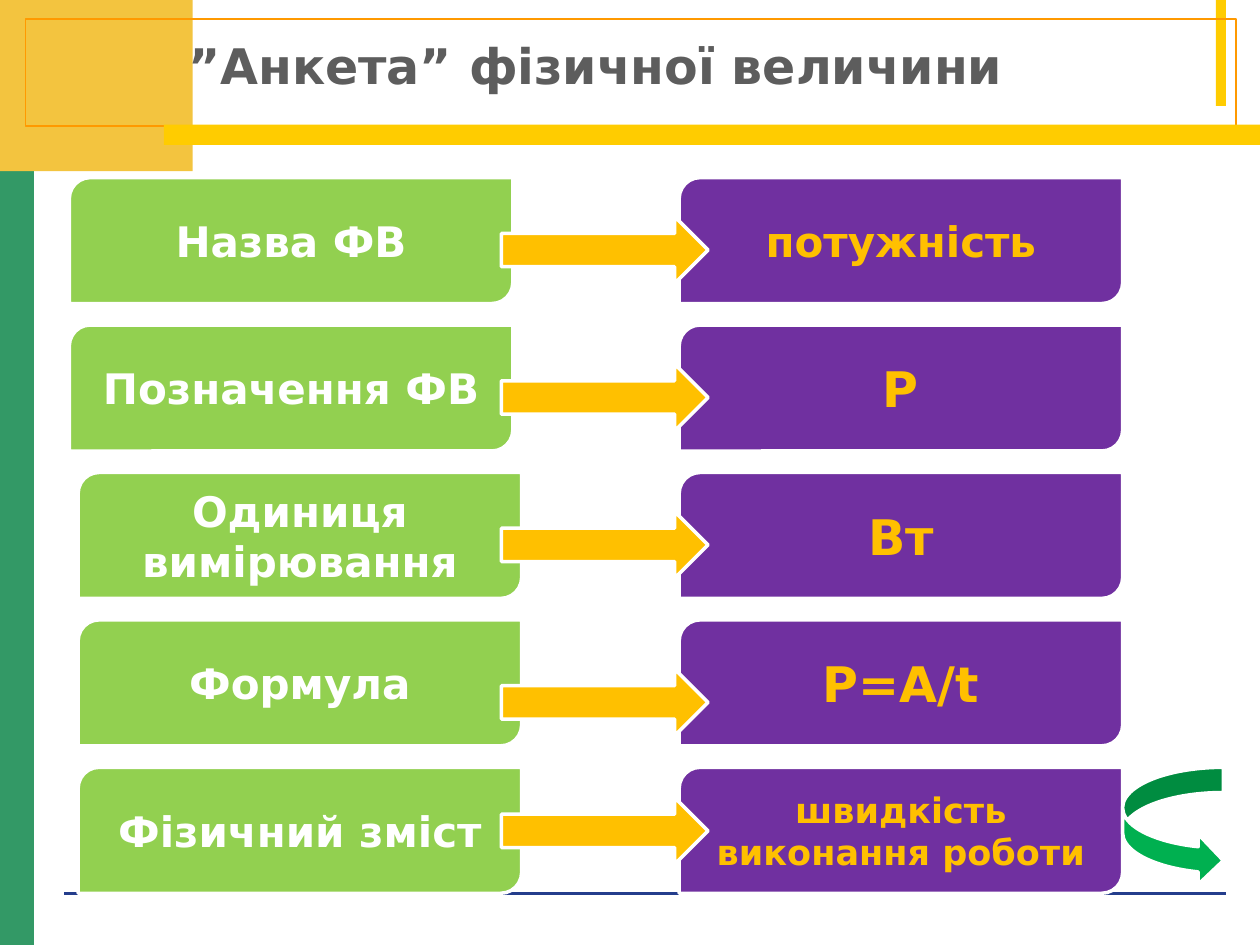
"""Build the slide with the profile of a physical quantity."""
from dataclasses import dataclass

from lxml import etree
from pptx import Presentation
from pptx.dml.color import RGBColor
from pptx.enum.shapes import MSO_CONNECTOR, MSO_SHAPE
from pptx.enum.text import MSO_ANCHOR, PP_ALIGN
from pptx.oxml.ns import qn
from pptx.util import Inches, Pt

RECT = MSO_SHAPE.RECTANGLE
CARD = MSO_SHAPE.ROUND_2_DIAG_RECTANGLE
ARROW = MSO_SHAPE.RIGHT_ARROW
CURVED = MSO_SHAPE.CURVED_RIGHT_ARROW
STRAIGHT = MSO_CONNECTOR.STRAIGHT
CENTER = PP_ALIGN.CENTER
MIDDLE = MSO_ANCHOR.MIDDLE


@dataclass(frozen=True)
class Theme:
    font: str = "DejaVu Sans"
    title: str = "5D5D5D"
    white: str = "FFFFFF"
    side: str = "339966"
    corner: str = "F3C43F"
    bar: str = "FFCC00"
    frame: str = "FF9900"
    rule: str = "243D8C"
    label: str = "92D050"
    value: str = "7030A0"
    accent: str = "FFC000"
    loop: str = "00B050"
    title_size: int = 28
    label_size: int = 24
    symbol_size: int = 28
    meaning_size: int = 20


theme = Theme()


def add_block(kind, box, fill=None, line=None, width=2):
    sp = s.shapes.add_shape(kind, *[Inches(v) for v in box])
    sp.shadow.inherit = False
    if fill:
        sp.fill.solid()
        sp.fill.fore_color.rgb = RGBColor.from_string(fill)
    else:
        sp.fill.background()
    if line:
        sp.line.color.rgb = RGBColor.from_string(line)
        sp.line.width = Pt(width)
    else:
        sp.line.fill.background()
    return sp


def write(sp, text, size, color):
    tf = sp.text_frame
    tf.word_wrap = True
    tf.vertical_anchor = MIDDLE
    p = tf.paragraphs[0]
    p.alignment = CENTER
    r = p.add_run()
    r.text = text
    r.font.name = theme.font
    r.font.size = Pt(size)
    r.font.bold = True
    r.font.color.rgb = RGBColor.from_string(color)


prs = Presentation()
prs.slide_width = Inches(10)
prs.slide_height = Inches(7.5)
s = prs.slides.add_slide(prs.slide_layouts[5])

add_block(RECT, (0, 1.07, 0.27, 6.43), theme.side)
add_block(RECT, (0, 0, 1.53, 1.36), theme.corner)
add_block(RECT, (9.65, 0, 0.08, 0.84), theme.bar)
add_block(RECT, (0.2, 0.15, 9.61, 0.85), line=theme.frame, width=0)
rule = s.shapes.add_connector(STRAIGHT, Inches(0.51), Inches(7.09), Inches(9.73), Inches(7.09))
rule.line.color.rgb = RGBColor.from_string(theme.rule)
rule.line.width = Pt(0)
etree.SubElement(rule._element.spPr, qn("a:effectLst"))
add_block(RECT, (1.3, 0.99, 8.7, 0.16), theme.bar)

title = s.shapes.title
title.left, title.top = Inches(0.39), Inches(0.23)
title.width, title.height = Inches(8.67), Inches(0.57)
write(title, "”Анкета” фізичної величини", theme.title_size, theme.title)
s.shapes._spTree.append(title._element)

rows = [
    ("Назва ФВ", 0.55, "потужність", theme.label_size, 1.72),
    ("Позначення ФВ", 0.55, "Р", theme.symbol_size, 2.89),
    ("Одиниця вимірювання", 0.62, "Вт", theme.symbol_size, 4.06),
    ("Формула", 0.62, "Р=A/t", theme.symbol_size, 5.31),
    ("Фізичний зміст", 0.62, "швидкість виконання роботи", theme.meaning_size, 6.33),
]
for i, (label, left, value, size, arrow_top) in enumerate(rows):
    top = 1.41 + 1.17 * i
    sp = add_block(CARD, (left, top, 3.52, 1), theme.label, theme.white)
    write(sp, label, theme.label_size, theme.white)
    sp = add_block(CARD, (5.39, top, 3.52, 1), theme.value, theme.white)
    write(sp, value, size, theme.accent)
    add_block(ARROW, (3.98, arrow_top, 1.64, 0.53), theme.accent, theme.white)

add_block(CURVED, (8.91, 6.09, 0.8, 0.94), theme.loop, theme.white)

prs.save("out.pptx")
